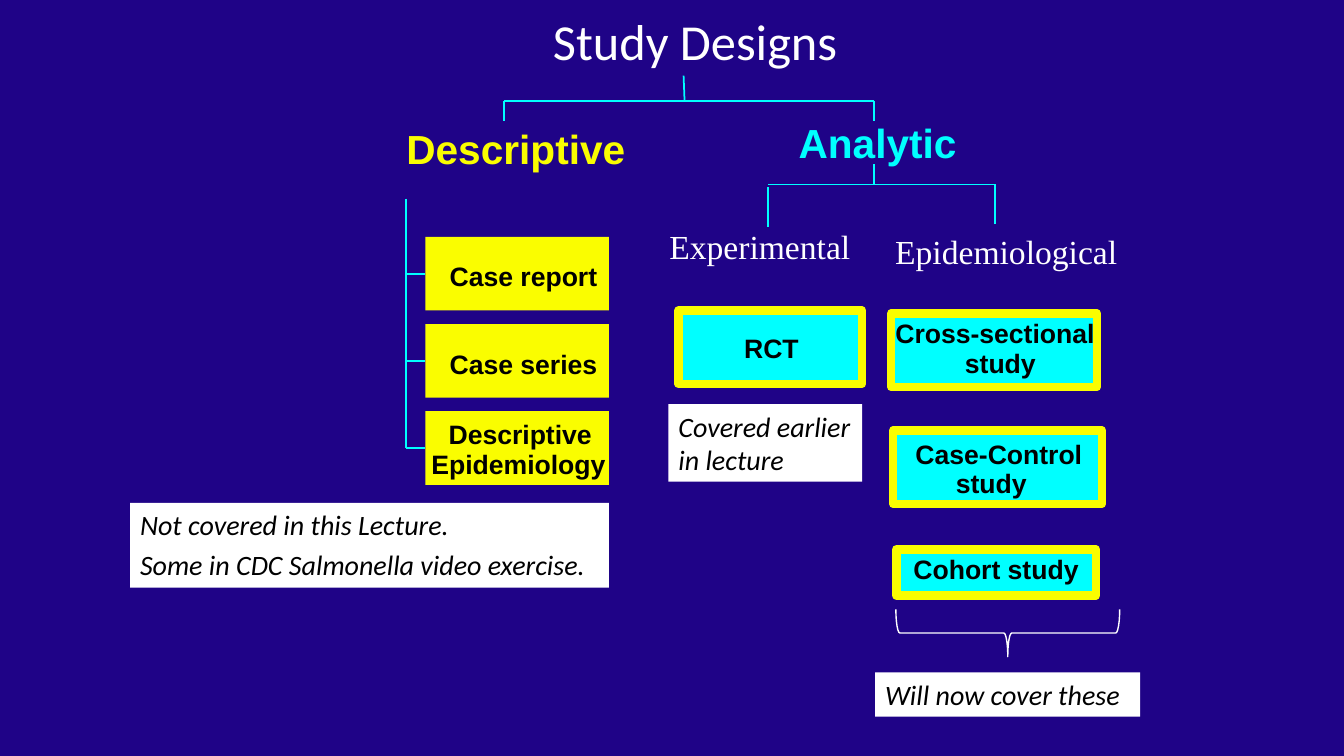
from lxml import etree
from pptx import Presentation
from pptx.dml.color import RGBColor
from pptx.enum.shapes import MSO_CONNECTOR, MSO_SHAPE
from pptx.enum.text import MSO_ANCHOR, MSO_AUTO_SIZE, PP_ALIGN
from pptx.oxml.ns import qn
from pptx.util import Inches, Pt

NAVY = RGBColor(0x1F, 0x03, 0x87)
CYAN = RGBColor(0x00, 0xFF, 0xFF)
YELLOW = RGBColor(0xFA, 0xFD, 0x00)
WHITE = RGBColor(0xFF, 0xFF, 0xFF)
BLACK = RGBColor(0x00, 0x00, 0x00)

TITLE = {"name": "Calibri", "size": Pt(36)}
HEADING = {"name": "Arial", "size": Pt(29), "bold": True}
LABEL = {"name": "Arial", "size": Pt(19), "bold": True}
BRANCH = {"name": "Times New Roman", "size": Pt(24)}
NOTE = {"name": "Calibri", "size": Pt(20), "italic": True}


class StudyPage:
    """Draws on one slide, measured in tenth-of-an-inch columns and rows."""

    def __init__(self, deck):
        self.page = deck.slides.add_slide(deck.slide_layouts[6])
        background = self.page.background.fill
        background.solid()
        background.fore_color.rgb = NAVY

    def grid(self, *cells):
        return [Inches(cell / 10) for cell in cells]

    def fill_text(self, frame, lines, style, colour, align=PP_ALIGN.LEFT,
                  gap=0):
        for index, line in enumerate(lines):
            para = frame.add_paragraph() if index else frame.paragraphs[0]
            para.alignment = align
            para.space_before = Pt(gap if index else 0)
            span = para.add_run()
            span.text = line
            for key, value in style.items():
                setattr(span.font, key, value)
            span.font.color.rgb = colour

    def text(self, place, line, style, colour, inset=(0, 0), wrap=False,
             align=PP_ALIGN.LEFT):
        frame = self.page.shapes.add_textbox(*self.grid(*place)).text_frame
        side, edge = self.grid(*inset)
        values = {"margin_left": side, "margin_right": side,
                  "margin_top": edge, "margin_bottom": edge,
                  "word_wrap": wrap,
                  "auto_size": MSO_AUTO_SIZE.SHAPE_TO_FIT_TEXT}
        for key, value in values.items():
            setattr(frame, key, value)
        self.fill_text(frame, [line], style, colour, align)

    def shape(self, place, fill=None, border=None, width=6,
              kind=MSO_SHAPE.RECTANGLE):
        box = self.page.shapes.add_shape(kind, *self.grid(*place))
        box.shadow.inherit = False
        for paint, colour in ((box.fill, fill), (box.line.fill, border)):
            if colour is None:
                paint.background()
            else:
                paint.solid()
                paint.fore_color.rgb = colour
        if border is not None:
            box.line.width = Pt(width)
        return box

    def note(self, place, lines, gap=0):
        frame = self.shape(place, WHITE).text_frame
        values = {"margin_right": 0, "word_wrap": True,
                  "vertical_anchor": MSO_ANCHOR.TOP}
        for key, value in values.items():
            setattr(frame, key, value)
        self.fill_text(frame, lines, NOTE, BLACK, gap=gap)

    def line(self, *ends, width=1.25):
        link = self.page.shapes.add_connector(
            MSO_CONNECTOR.STRAIGHT, *self.grid(*ends))
        link.line.color.rgb = CYAN
        link.line.width = Pt(width)
        etree.SubElement(link._element.spPr, qn("a:effectLst"))


def draw_tree(page):
    page.text((25.1, 1, 87.7, 6.1), "Study Designs", TITLE, WHITE,
              wrap=True, align=PP_ALIGN.CENTER)
    page.line(67.8, 7.5, 67.9, 10.1)
    for start, end in ((50, 68.5), (68.5, 86.7)):
        page.line(start, 10, end, 10)
    for column in (50, 86.7):
        page.line(column, 10, column, 12)
    page.text((40.3, 12.3, 21.9, 4.9), "Descriptive", HEADING, YELLOW)
    page.text((79.2, 11.7, 15.8, 4.9), "Analytic", HEADING, CYAN)
    page.line(86.7, 16.3, 86.7, 18.3)
    page.line(76.2, 18.3, 98.7, 18.3, width=1)
    for column, top in ((76.2, 18.6), (98.7, 18.3)):
        page.line(column, top, column, top + 3.9)
    page.text((65.4, 21.9, 20.1, 5), "Experimental", BRANCH, WHITE, (1, 0.5))
    page.text((87.8, 22.4, 24.2, 5), "Epidemiological", BRANCH, WHITE,
              (1, 0.5))


def draw_descriptive(page):
    start = 19.7
    for row in range(3):
        top = 23.5 + 8.65 * row
        middle = top + 3.65
        page.line(40.3, start, 40.3, middle)
        page.line(40.3, middle, 42.2, middle)
        page.shape((42.2, top, 18.2, 7.3), YELLOW)
        start = middle


def draw_analytic(page):
    for place in ((67.3, 30.8, 18.2, 7.3), (88.4, 31.1, 20.4, 7.3),
                  (88.6, 42.7, 20.7, 7.3), (88.9, 54.5, 19.8, 4.6)):
        page.shape(place, CYAN, YELLOW)


def draw_labels(page):
    labels = (
        ("Case report", 44.6, 25.8, 14.8),
        ("Case series", 44.6, 34.5, 14.9),
        ("Descriptive", 44.5, 41.5, 14.4),
        ("Epidemiology", 42.8, 44.4, 17.3),
        ("RCT", 73.8, 32.9, 5.5),
        ("Cross-sectional", 88.8, 31.4, 20.1),
        ("study", 95.7, 34.4, 7.1),
        ("Case-Control", 90.8, 43.4, 16.8),
        ("study", 94.8, 46.3, 7.1),
        ("Cohort study", 90.6, 54.9, 16.6),
    )
    for words, left, top, width in labels:
        page.text((left, top, width, 3.2), words, LABEL, BLACK)


def draw_notes(page):
    page.note((12.9, 49.9, 47.5, 8.4),
              ["Not covered in this Lecture.",
               "Some in CDC Salmonella video exercise."], gap=4)
    page.note((86.8, 66.7, 26.3, 4.4), ["Will now cover these"])
    page.note((66.3, 40.1, 19.2, 7.7), ["Covered earlier", "in lecture"])
    brace = page.shape((97.6, 51.7, 4.7, 22.2), border=WHITE, width=1,
                       kind=MSO_SHAPE.RIGHT_BRACE)
    brace.rotation = 90


def main():
    deck = Presentation()
    deck.slide_width, deck.slide_height = Inches(13.33), Inches(7.5)
    page = StudyPage(deck)
    for draw in (draw_tree, draw_descriptive, draw_analytic, draw_labels,
                 draw_notes):
        draw(page)
    deck.save("out.pptx")


if __name__ == "__main__":
    main()
